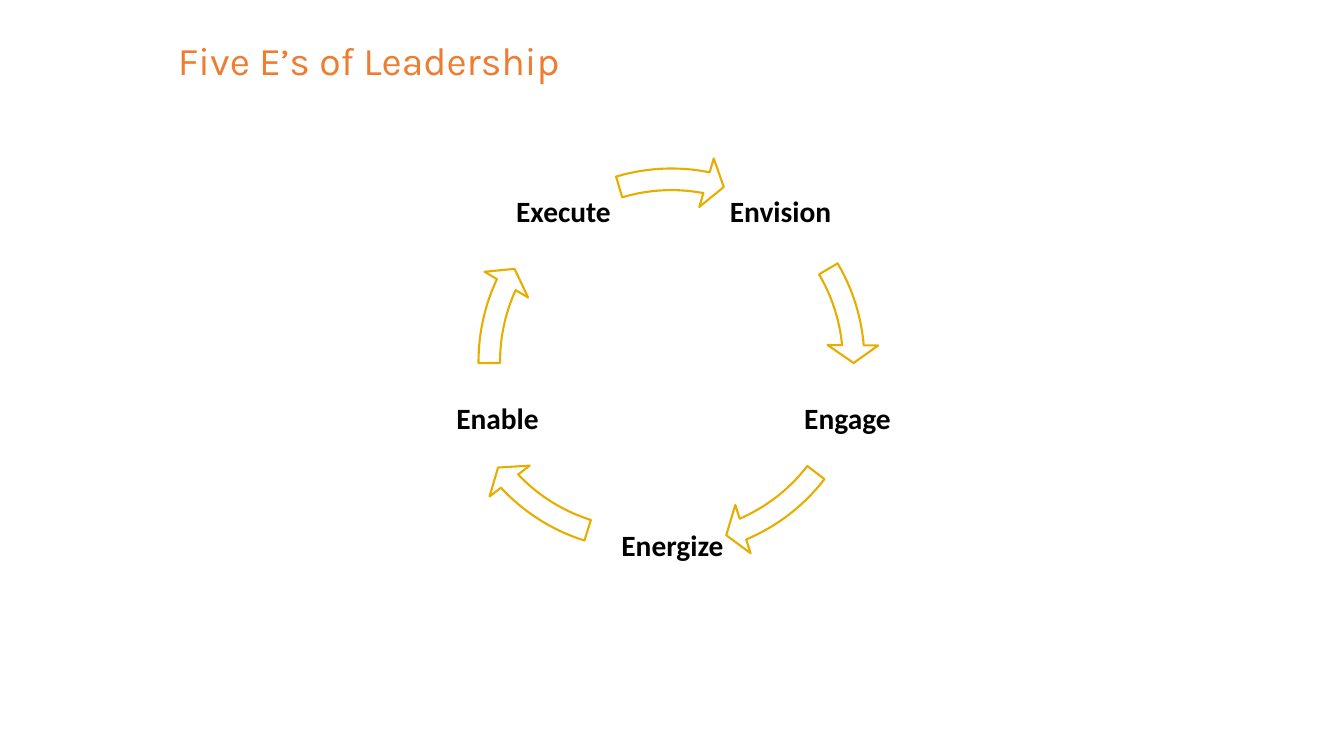
from dataclasses import dataclass

from pptx import Presentation
from pptx.dml.color import RGBColor
from pptx.enum.shapes import MSO_SHAPE
from pptx.enum.text import MSO_ANCHOR, PP_ALIGN
from pptx.slide import Slide
from pptx.util import Emu, Pt

EMU_PER_PX = 914400 / 100.8
LABEL_SIZE = 111
RING_SIZE = 415


@dataclass(frozen=True)
class TextStyle:
    font: str
    size: int
    color: RGBColor
    bold: bool
    align: PP_ALIGN
    inset_x: int
    inset_y: int


@dataclass(frozen=True)
class Theme:
    title: TextStyle = TextStyle(
        "Karla", 28, RGBColor(0xED, 0x7D, 0x31), False, PP_ALIGN.LEFT, 10, 5)
    label: TextStyle = TextStyle(
        "Calibri", 21, RGBColor(0, 0, 0), True, PP_ALIGN.CENTER, 3, 3)
    arrow_fill: RGBColor = RGBColor(0xFF, 0xFF, 0xFF)
    arrow_line: RGBColor = RGBColor(0xE7, 0xAE, 0x00)
    arrow_width: float = 1.5


@dataclass(frozen=True)
class Label:
    text: str
    left: int
    top: int


@dataclass(frozen=True)
class Arrow:
    """An arc of the ring, in degrees clockwise from three o'clock."""
    start: float
    end: float
    left: int = 464
    top: int = 154


THEME = Theme()
STEPS = (
    (Label("Envision", 725, 157), Arrow(329.44, 354.88)),
    (Label("Engage", 792, 364), Arrow(37.56, 66.9)),
    (Label("Energize", 617, 491), Arrow(107.5, 136.84, left=435, top=149)),
    (Label("Enable", 442, 364), Arrow(179.52, 204.96)),
    (Label("Execute", 508, 157), Arrow(253.31, 281.09)),
)


def px(length: int) -> Emu:
    return Emu(round(length * EMU_PER_PX))


def angle(degrees: float) -> float:
    """Turn degrees into the 1/100000 scale of shape adjustments."""
    return degrees * 60000 / 100000


def add_text(page: Slide, text: str, left: int, top: int,
             width: int, height: int, style: TextStyle) -> None:
    box = page.shapes.add_textbox(px(left), px(top), px(width), px(height))
    frame = box.text_frame
    frame.word_wrap = True
    frame.vertical_anchor = MSO_ANCHOR.MIDDLE
    frame.margin_left = frame.margin_right = px(style.inset_x)
    frame.margin_top = frame.margin_bottom = px(style.inset_y)
    para = frame.paragraphs[0]
    para.alignment = style.align
    para.line_spacing = 0.9
    span = para.add_run()
    span.text = text
    span.font.name = style.font
    span.font.size = Pt(style.size)
    span.font.bold = style.bold
    span.font.color.rgb = style.color


def add_arrow(page: Slide, arrow: Arrow) -> None:
    shape = page.shapes.add_shape(
        MSO_SHAPE.CIRCULAR_ARROW, px(arrow.left), px(arrow.top),
        px(RING_SIZE), px(RING_SIZE))
    settings = (0.052, angle(5.6), angle(arrow.end), angle(arrow.start), 0.061)
    for index, value in enumerate(settings):
        shape.adjustments[index] = value
    shape.shadow.inherit = False
    shape.fill.solid()
    shape.fill.fore_color.rgb = THEME.arrow_fill
    shape.line.color.rgb = THEME.arrow_line
    shape.line.width = Pt(THEME.arrow_width)


def main() -> None:
    deck = Presentation()
    deck.slide_width, deck.slide_height = px(1344), px(756)
    page = deck.slides.add_slide(deck.slide_layouts[6])
    add_text(page, "Five E’s of Leadership", 168, 0, 907, 126, THEME.title)
    for label, arrow in STEPS:
        add_text(page, label.text, label.left, label.top,
                 LABEL_SIZE, LABEL_SIZE, THEME.label)
        add_arrow(page, arrow)
    deck.save("out.pptx")


if __name__ == "__main__":
    main()
